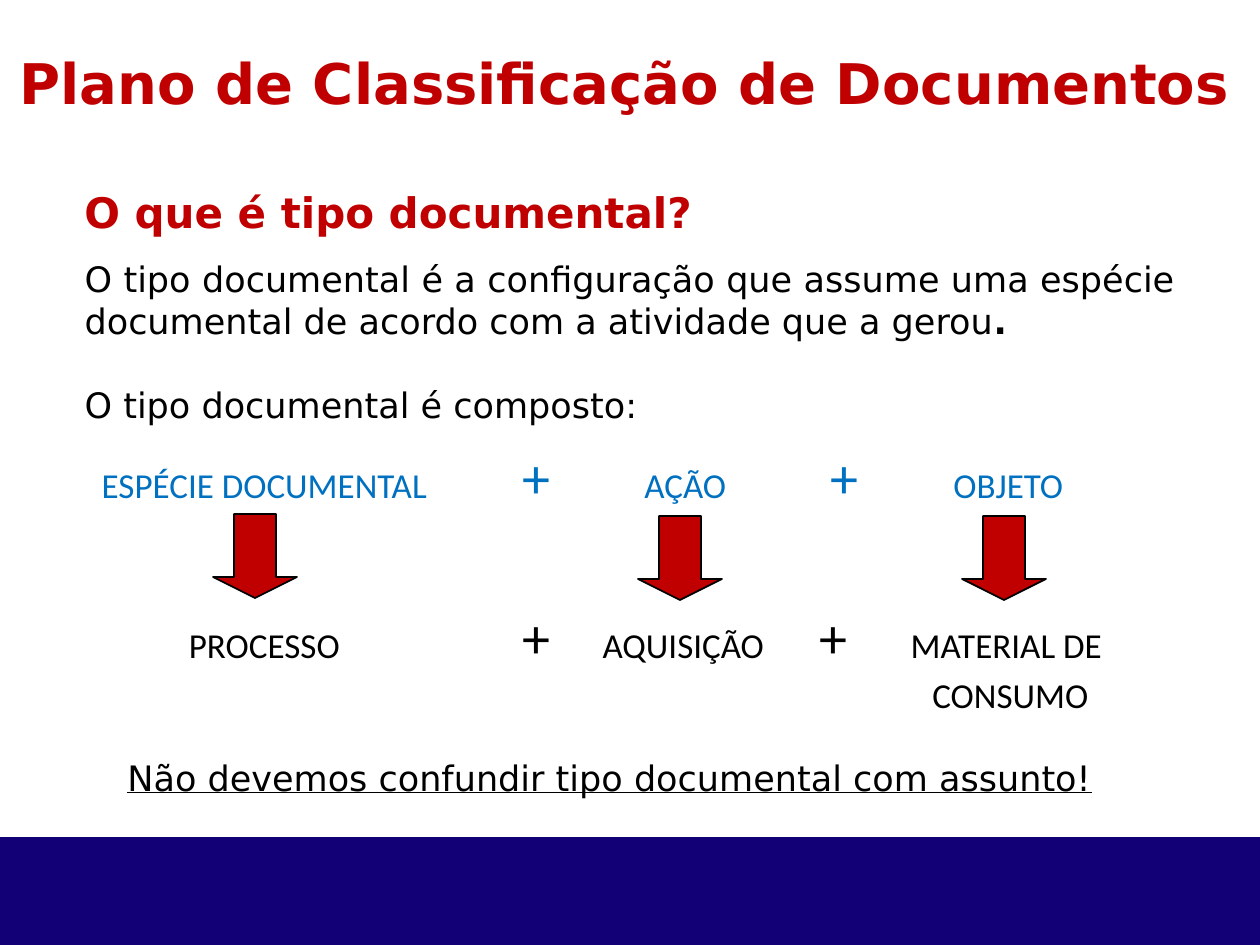
from typing import NamedTuple

from lxml import etree
from pptx import Presentation, util as u
from pptx.dml.color import RGBColor
from pptx.enum import shapes, text
from pptx.oxml.ns import qn

PX = 914400 / 126  # EMU per px
RED, BLUE, BLACK, NAVY = "C00000", "0070C0", "000000", "110076"
HEAD_FONT, FORMULA_FONT = "DejaVu Sans", "Calibri"


class Box(NamedTuple):
    left: int
    top: int
    width: int
    height: int


class Term(NamedTuple):
    label: str
    center: int


class FormulaRow(NamedTuple):
    terms: list[Term]
    color: str
    space_before: int


FORMULA_BOX = Box(35, 444, 1147, 296)
FORMULA_INSET = 13
FORMULA = [
    FormulaRow([Term("ESPÉCIE DOCUMENTAL", 265), Term("+", 537), Term("AÇÃO", 686),
                Term("+", 845), Term("OBJETO", 1009)], BLUE, 0),
    FormulaRow([Term("PROCESSO", 265), Term("+", 537), Term("AQUISIÇÃO", 684),
                Term("+", 834), Term("MATERIAL DE", 1007)], BLACK, 57),
    FormulaRow([Term("CONSUMO", 1011)], BLACK, 4),
]
ARROWS = [Box(213, 514, 84, 84), Box(638, 516, 84, 84), Box(962, 516, 84, 84)]


def px(length: int) -> u.Emu:
    return u.Emu(round(length * PX))


def emu(box: Box) -> list[u.Emu]:
    return [px(length) for length in box]


def rgb(color: str) -> RGBColor:
    return RGBColor.from_string(color)


def place(shape, box: Box) -> None:
    shape.left, shape.top, shape.width, shape.height = emu(box)


def prepare(frame) -> None:
    frame.word_wrap = True
    frame.auto_size = text.MSO_AUTO_SIZE.NONE
    frame.vertical_anchor = text.MSO_ANCHOR.TOP


def style(paragraph, size: int, color: str, face: str = HEAD_FONT,
          bold: bool = False, align=text.PP_ALIGN.JUSTIFY) -> None:
    paragraph.alignment = align
    font = paragraph.font
    font.size, font.name, font.bold = u.Pt(size), face, bold
    font.color.rgb = rgb(color)


def remove_bullet(paragraph) -> None:
    props = paragraph._p.get_or_add_pPr()
    props.set("marL", "0")
    props.set("indent", "0")
    etree.SubElement(props, qn("a:buNone"))


def center_tabs(paragraph, centers: list[int]) -> None:
    tabs = etree.SubElement(paragraph._p.get_or_add_pPr(), qn("a:tabLst"))
    for center in centers:
        offset = center - FORMULA_BOX.left - FORMULA_INSET
        etree.SubElement(tabs, qn("a:tab"), pos=str(px(offset)), algn="ctr")


def add_label(slide, box: Box, words: str, size: int, color: str, bold: bool = False):
    frame = slide.shapes.add_textbox(*emu(box)).text_frame
    prepare(frame)
    label = frame.paragraphs[0]
    label.text = words
    style(label, size, color, bold=bold)
    return label


def add_formula(slide, rows: list[FormulaRow]) -> None:
    frame = slide.shapes.add_textbox(*emu(FORMULA_BOX)).text_frame
    prepare(frame)
    for index, row in enumerate(rows):
        line = frame.add_paragraph() if index else frame.paragraphs[0]
        center_tabs(line, [term.center for term in row.terms])
        line.line_spacing = 0.9
        line.space_before = u.Pt(row.space_before)
        style(line, 20, row.color, FORMULA_FONT, align=text.PP_ALIGN.LEFT)
        for term in row.terms:
            run = line.add_run()
            run.text = "\t" + term.label
            if term.label == "+":
                run.font.size = u.Pt(32)


def add_solid(slide, kind, box: Box, fill: str, line: str | None = None) -> None:
    solid = slide.shapes.add_shape(kind, *emu(box))
    solid.shadow.inherit = False
    solid.fill.solid()
    solid.fill.fore_color.rgb = rgb(fill)
    if line:
        solid.line.color.rgb = rgb(line)
        solid.line.width = u.Pt(1)
    else:
        solid.line.fill.background()


def fill_title(title) -> None:
    place(title, Box(0, 33, 1250, 89))
    prepare(title.text_frame)
    heading = title.text_frame.paragraphs[0]
    heading.text = "Plano de Classificação de Documentos"
    heading.line_spacing = 1.14
    style(heading, 32, RED, bold=True, align=text.PP_ALIGN.CENTER)


def fill_definition(body) -> None:
    place(body, Box(72, 251, 1116, 183))
    frame = body.text_frame
    prepare(frame)
    definition = frame.paragraphs[0]
    definition.text = ("O tipo documental é a configuração que assume uma espécie "
                       "documental de acordo com a atividade que a gerou")
    period = definition.add_run()
    period.text = "."
    period.font.bold = True
    composition = frame.add_paragraph()
    composition.text = "O tipo documental é composto:"
    for paragraph, gap in ((definition, 0), (composition, 24)):
        remove_bullet(paragraph)
        paragraph.space_before = u.Pt(gap)
        style(paragraph, 20, BLACK)


def main() -> None:
    deck = Presentation()
    deck.slide_width, deck.slide_height = px(1260), px(945)
    slide = deck.slides.add_slide(deck.slide_layouts[1])

    # Title and definition
    fill_title(slide.shapes.title)
    fill_definition(slide.placeholders[1])

    # Footer band
    add_solid(slide, shapes.MSO_SHAPE.RECTANGLE, Box(0, 837, 1260, 108), NAVY)

    # Question
    add_label(slide, Box(72, 180, 701, 63), "O que é tipo documental?", 24, RED, bold=True)

    # Formula, its example and the arrows between them
    add_formula(slide, FORMULA)
    for arrow in ARROWS:
        add_solid(slide, shapes.MSO_SHAPE.DOWN_ARROW, arrow, RED, BLACK)
    for shape in slide.shapes:
        if len(shape_adjustments := getattr(shape, "adjustments", [])) == 2:
            shape_adjustments[0], shape_adjustments[1] = 0.5, 0.25

    # Warning
    warning = add_label(slide, Box(115, 750, 1021, 55),
                        "Não devemos confundir tipo documental com assunto!", 20, BLACK)
    warning.font.underline = True

    deck.save("out.pptx")


if __name__ == "__main__":
    main()
